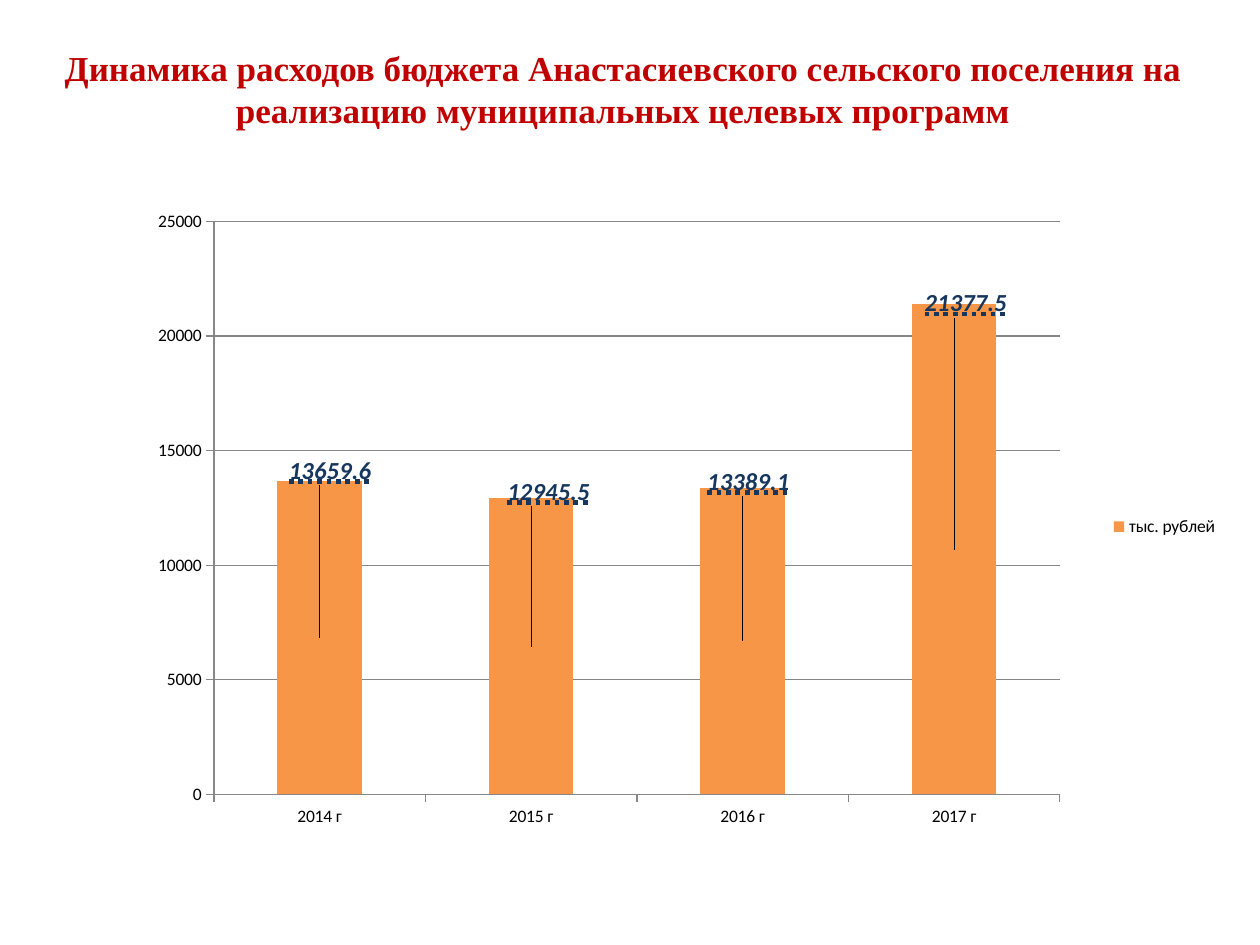
from lxml import etree
from pptx import Presentation
from pptx.chart.data import CategoryChartData
from pptx.dml.color import RGBColor
from pptx.enum.chart import XL_CHART_TYPE, XL_LABEL_POSITION, XL_LEGEND_POSITION, XL_TICK_MARK
from pptx.enum.text import MSO_ANCHOR, MSO_UNDERLINE, PP_ALIGN
from pptx.oxml.ns import qn
from pptx.util import Inches, Pt

RED = RGBColor(0xC0, 0x00, 0x00)
ORANGE = RGBColor(0xF7, 0x96, 0x46)
NAVY = RGBColor(0x17, 0x37, 0x5E)
GRAY = RGBColor(0x86, 0x86, 0x86)
BLACK = RGBColor(0x00, 0x00, 0x00)


def manual_layout(**settings):
    """Return a c:layout element holding the given manual settings in order."""
    layout = etree.Element(qn("c:layout"))
    manual = etree.SubElement(layout, qn("c:manualLayout"))
    for name, value in settings.items():
        etree.SubElement(manual, qn(f"c:{name}")).set("val", str(value))
    return layout


prs = Presentation()
prs.slide_width, prs.slide_height = Inches(10), Inches(7.5)
s = prs.slides.add_slide(prs.slide_layouts[5])

# Title
title = s.shapes.title
title.left, title.top = Inches(0.39), Inches(0.23)
title.width, title.height = Inches(9.11), Inches(0.94)
tf = title.text_frame
tf.text = ("Динамика расходов бюджета Анастасиевского сельского поселения "
           "на реализацию муниципальных целевых программ")
tf.word_wrap = True
tf.vertical_anchor = MSO_ANCHOR.MIDDLE
p = tf.paragraphs[0]
p.alignment = PP_ALIGN.CENTER
font = p.runs[0].font
font.name, font.size, font.bold = "Times New Roman", Pt(20), True
font.color.rgb = RED

# Chart
data = CategoryChartData()
data.categories = ["2014 г", "2015 г", "2016 г", "2017 г"]
data.add_series("тыс. рублей", [13659.6, 12945.5, 13389.1, 21377.5])
chart = s.shapes.add_chart(XL_CHART_TYPE.COLUMN_STACKED, Inches(0.47), Inches(1.33),
                           Inches(9.3), Inches(5.7), data).chart
chart.has_title = False
chart.font.name, chart.font.size = "Calibri", Pt(10)
chart.font.color.rgb = BLACK
chart.has_legend = True
chart.legend.position = XL_LEGEND_POSITION.RIGHT
chart.legend.include_in_layout = False

plot_area = chart.element.find(".//" + qn("c:plotArea"))
for old in plot_area.findall(qn("c:layout")):
    plot_area.remove(old)
plot_area.insert(0, manual_layout(layoutTarget="inner", xMode="edge", yMode="edge",
                                  x=0.132, y=0.075, w=0.722, h=0.798))

value_axis = chart.value_axis
value_axis.minimum_scale, value_axis.maximum_scale = 0, 25000
value_axis.major_unit = 5000
value_axis.has_major_gridlines = True
value_axis.major_gridlines.format.line.color.rgb = GRAY
for axis in (chart.category_axis, value_axis):
    axis.major_tick_mark = XL_TICK_MARK.OUTSIDE
    axis.format.line.color.rgb = GRAY

plot = chart.plots[0]
plot.vary_by_categories = False
plot.gap_width, plot.overlap = 150, 100
series = plot.series[0]
series.format.fill.solid()
series.format.fill.fore_color.rgb = ORANGE

# Value labels, moved from the bar centres to the bar tops
label_offsets = [(0.009, -0.233), (0.015, -0.215), (0.005, -0.222), (0.01, -0.343)]
for i in range(len(label_offsets)):
    label = series.points[i].data_label
    label.position = XL_LABEL_POSITION.CENTER
    font = label.font
    font.size, font.bold, font.italic = Pt(14), True, True
    font.underline = MSO_UNDERLINE.DOTTED_HEAVY_LINE
    font.color.rgb = NAVY
for label_xml, (x, y) in zip(plot_area.iter(qn("c:dLbl")), label_offsets):
    label_xml.find(qn("c:idx")).addnext(manual_layout(x=x, y=y))

prs.save("out.pptx")
